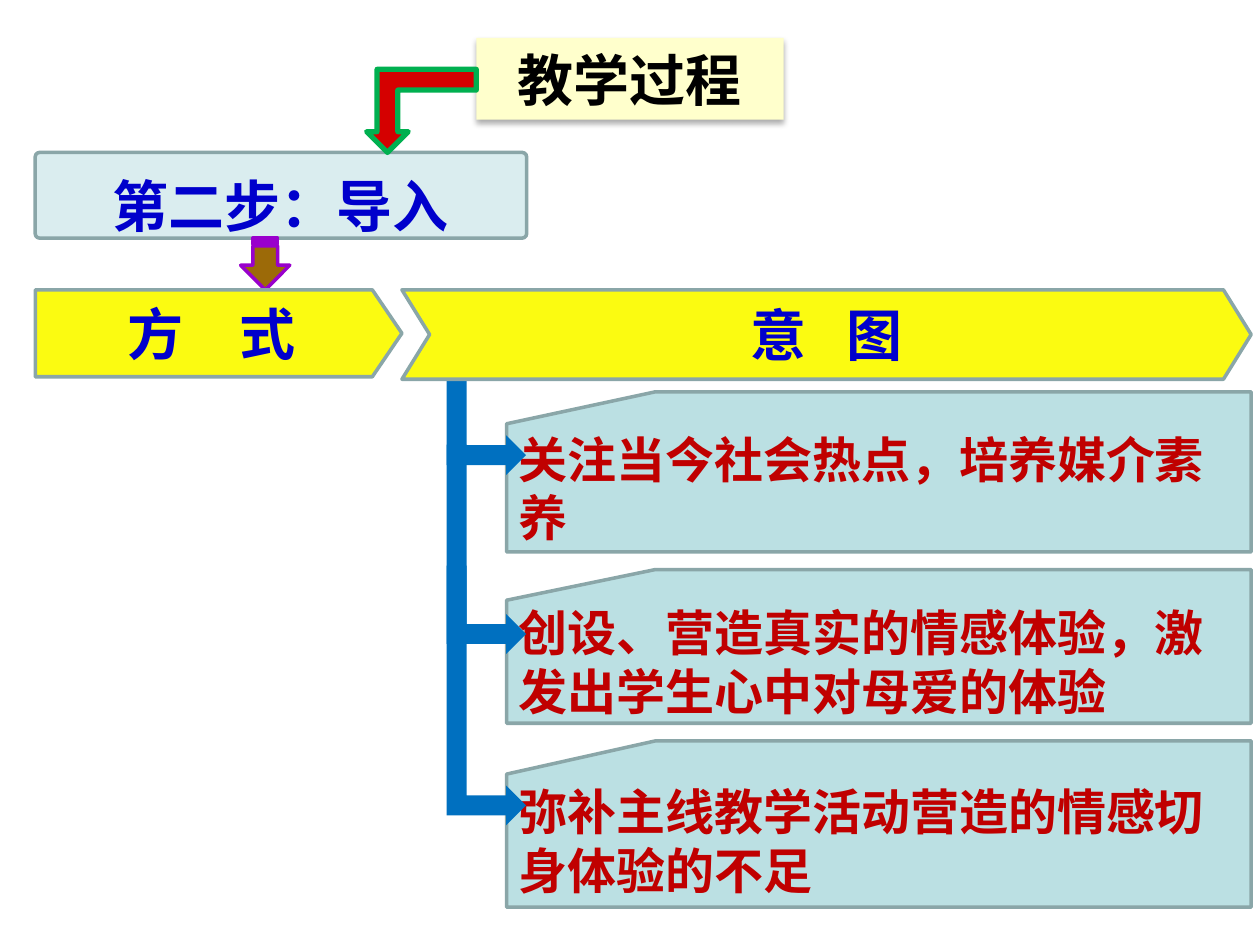
"""Build the teaching-process slide for step two, the lead-in."""
import pptx
import pptx.dml.color
import pptx.enum.shapes
import pptx.enum.text
import pptx.oxml
import pptx.oxml.ns
import pptx.util

Inches = pptx.util.Inches
Pt = pptx.util.Pt
SHAPE = pptx.enum.shapes.MSO_SHAPE
ALIGN = pptx.enum.text.PP_ALIGN
ANCHOR = pptx.enum.text.MSO_ANCHOR
NAMESPACE = pptx.oxml.ns.nsdecls("a")
JP, SC = "Noto Sans CJK JP", "Noto Sans CJK SC"
COLORS = {
    "cream": "FFFFCC", "black": "000000", "pale": "DAEDEF", "edge": "8AA6A8",
    "label": "0000CC", "red": "D50000", "green": "00B050", "brown": "996600",
    "purple": "9900CC", "yellow": "FBFB11", "card": "BBE0E3",
    "card_text": "C00000", "branch": "0070C0",
}


def add_block(kind, bounds, fill, line=None, width=2, rotation=0, adjust=None):
    block = page.shapes.add_shape(kind, *[Inches(value) for value in bounds])
    block.shadow.inherit = False
    block.rotation = rotation
    block.fill.solid()
    block.fill.fore_color.rgb = pptx.dml.color.RGBColor.from_string(COLORS[fill])
    if line:
        block.line.color.rgb = pptx.dml.color.RGBColor.from_string(COLORS[line])
        block.line.width = Pt(width)
    else:
        block.line.fill.background()
    if adjust is not None:
        block.adjustments[0] = adjust
    return block


def write_text(box, text, size, face, color, align=ALIGN.CENTER):
    frame = box.text_frame
    frame.word_wrap = True
    frame.auto_size = pptx.enum.text.MSO_AUTO_SIZE.NONE
    frame.vertical_anchor = ANCHOR.MIDDLE
    para = frame.paragraphs[0]
    para.text = text
    para.alignment = align
    para.font.size = Pt(size)
    para.font.bold = True
    para.font.name = face
    para.font.color.rgb = pptx.dml.color.RGBColor.from_string(COLORS[color])
    defaults = para._p.pPr.find(pptx.oxml.ns.qn("a:defRPr"))
    defaults.append(pptx.oxml.parse_xml(f'<a:ea {NAMESPACE} typeface="{face}"/>'))
    return para


deck = pptx.Presentation()
deck.slide_width, deck.slide_height = Inches(10), Inches(7.5)
page = deck.slides.add_slide(deck.slide_layouts[5])

title = page.shapes.title
title.left, title.top = Inches(3.78), Inches(0.3)
title.width, title.height = Inches(2.44), Inches(0.65)
title.fill.solid()
title.fill.fore_color.rgb = pptx.dml.color.RGBColor.from_string(COLORS["cream"])
title._element.spPr.append(pptx.oxml.parse_xml(
    f'<a:effectLst {NAMESPACE}><a:outerShdw blurRad="{Pt(3.5)}" dist="{Pt(2.2)}" '
    f'dir="5400000" rotWithShape="0"><a:srgbClr val="{COLORS["black"]}">'
    '<a:alpha val="32000"/></a:srgbClr></a:outerShdw></a:effectLst>'))
write_text(title, "教学过程", 32, SC, "black")

step = add_block(SHAPE.ROUNDED_RECTANGLE, (0.28, 1.21, 3.9, 0.68), "pale", "edge", adjust=0.05)
write_text(step, "第二步：导入", 32, JP, "label").line_spacing = 1.3

add_block(SHAPE.BENT_UP_ARROW, (2.91, 0.55, 0.87, 0.66), "red", "green", 3, rotation=180)
down_arrow = add_block(SHAPE.STRIPED_RIGHT_ARROW, (1.9, 1.9, 0.41, 0.39), "brown", "purple",
                       rotation=90)
fill_color = down_arrow._element.spPr.find(".//" + pptx.oxml.ns.qn("a:srgbClr"))
fill_color.append(pptx.oxml.parse_xml(f'<a:alpha {NAMESPACE} val="97000"/>'))

method = add_block(SHAPE.PENTAGON, (0.28, 2.3, 2.91, 0.69), "yellow", "edge", adjust=0.34)
write_text(method, "方　式", 32, JP, "label")

cards = [
    (3.11, 1.27, "关注当今社会热点，培养媒介素养"),
    (4.52, 1.22, "创设、营造真实的情感体验，激发出学生心中对母爱的体验"),
    (5.88, 1.32, "弥补主线教学活动营造的情感切身体验的不足"),
]
for top, height, text in cards:
    card = add_block(SHAPE.FLOWCHART_CARD, (4.02, top, 5.91, height), "card", "edge")
    write_text(card, text, 28, SC, "card_text", ALIGN.LEFT)

branch_center, branch_depth = 3.86, 0.63
for bottom, length in [(3.77, 0.87), (5.19, 1.66), (6.55, 2.06)]:
    bounds = (branch_center - length / 2, bottom - (length + branch_depth) / 2,
              length, branch_depth)
    add_block(SHAPE.BENT_UP_ARROW, bounds, "branch", rotation=90)

purpose = add_block(SHAPE.CHEVRON, (3.19, 2.3, 6.74, 0.71), "yellow", "edge", adjust=0.31)
purpose_para = write_text(purpose, "意　图", 32, JP, "label")
purpose_para._p.pPr.find(pptx.oxml.ns.qn("a:defRPr")).set("spc", "-480")

deck.save("out.pptx")
